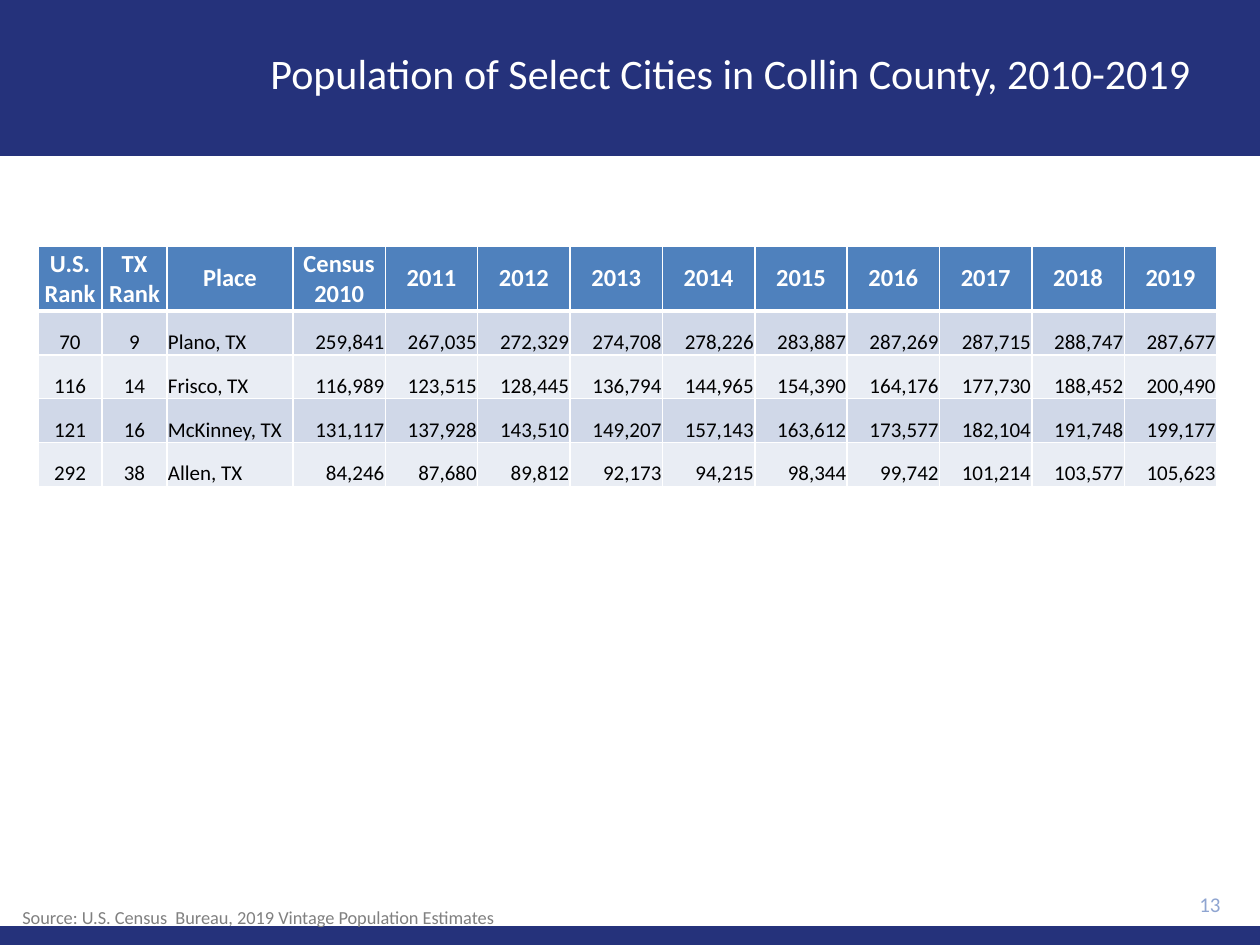
"""Build the slide on city populations in Collin County."""
from lxml import etree
from pptx import Presentation
from pptx.dml.color import RGBColor
from pptx.enum.shapes import MSO_SHAPE
from pptx.enum.text import MSO_ANCHOR, PP_ALIGN
from pptx.oxml.ns import qn
from pptx.util import Emu, Pt

LEFT, CENTER, RIGHT = PP_ALIGN.LEFT, PP_ALIGN.CENTER, PP_ALIGN.RIGHT
TOP, MIDDLE, BOTTOM = MSO_ANCHOR.TOP, MSO_ANCHOR.MIDDLE, MSO_ANCHOR.BOTTOM
RECT = MSO_SHAPE.RECTANGLE

TITLE = "Population of Select Cities in Collin County, 2010-2019"
SOURCE = "Source: U.S. Census  Bureau, 2019 Vintage Population Estimates"
NUMBER = "13"
HEADER = ["U.S. Rank", "TX Rank", "Place", "Census 2010", *map(str, range(2011, 2020))]
CITIES = [
    (70, 9, "Plano, TX", 259841, 267035, 272329, 274708, 278226,
     283887, 287269, 287715, 288747, 287677),
    (116, 14, "Frisco, TX", 116989, 123515, 128445, 136794, 144965,
     154390, 164176, 177730, 188452, 200490),
    (121, 16, "McKinney, TX", 131117, 137928, 143510, 149207, 157143,
     163612, 173577, 182104, 191748, 199177),
    (292, 38, "Allen, TX", 84246, 87680, 89812, 92173, 94215,
     98344, 99742, 101214, 103577, 105623),
]
BARS = [(0, 0, 1260, 156), (0, 926, 1260, 19)]
TABLE = (38, 246, 1179, 239)
FIRST_COLS = [64, 65, 126]
HEADER_H, ROW_H = 63, 44
NAVY, WHITE, HEAD_FILL = "25327B", "FFFFFF", "4F81BD"
BANDS = ["D0D8E8", "E9EDF4"]
TITLE_FMT = dict(size=24, color=WHITE, align=CENTER, anchor=MIDDLE, spacing=0.9)
NUMBER_FMT = dict(size=12, color="8FA5D1", align=RIGHT, anchor=MIDDLE)
SOURCE_FMT = dict(size=10.5, color="808080", align=LEFT, anchor=TOP, spacing=1.07)
HEAD_FMT = dict(size=14, color=WHITE, align=CENTER, bold=True)
BODY_FMT = dict(size=12, color="000000")


def px(n):
    return Emu(round(n * 914400 / 126))


def rgb(value):
    return RGBColor.from_string(value)


def place(shape, box):
    for name, n in zip(("left", "top", "width", "height"), box):
        setattr(shape, name, px(n))


def write(tf, text, size, color, align, anchor=None, bold=False, spacing=None):
    p = tf.paragraphs[0]
    r = p.add_run()
    r.text = text
    for name, value in dict(name="Calibri", size=Pt(size), bold=bold).items():
        setattr(r.font, name, value)
    r.font.color.rgb = rgb(color)
    p.alignment, p.line_spacing = align, spacing
    if anchor is not None:
        tf.word_wrap, tf.vertical_anchor = True, anchor


def add_text(s, box, text, fmt):
    sp = s.shapes.add_textbox(*map(px, box))
    write(sp.text_frame, text, **fmt)


def set_borders(cell, **widths):
    tc_pr = cell._tc.get_or_add_tcPr()
    for i, (side, width) in enumerate(widths.items()):
        ln = etree.Element(qn(f"a:ln{side}"), w=str(Pt(width)))
        fill = etree.SubElement(ln, qn("a:solidFill"))
        etree.SubElement(fill, qn("a:srgbClr"), val=WHITE)
        tc_pr.insert(i, ln)


def format_cell(cell, fill, anchor, margins):
    cell.fill.solid()
    cell.fill.fore_color.rgb = rgb(fill)
    cell.vertical_anchor = anchor
    for side, n in zip(("left", "top", "right", "bottom"), margins):
        setattr(cell, f"margin_{side}", px(n))


def add_table(s):
    n_rows, n_cols = len(CITIES) + 1, len(HEADER)
    table = s.shapes.add_table(n_rows, n_cols, *map(px, TABLE)).table
    n_counts = n_cols - len(FIRST_COLS)
    count_w = (TABLE[2] - sum(FIRST_COLS)) / n_counts
    for col, width in zip(table.columns, FIRST_COLS + [count_w] * n_counts):
        col.width = px(width)
    for row, height in zip(table.rows, [HEADER_H] + [ROW_H] * len(CITIES)):
        row.height = px(height)
    aligns = [CENTER, CENTER, LEFT] + [RIGHT] * n_counts
    for c, text in enumerate(HEADER):
        cell = table.cell(0, c)
        format_cell(cell, HEAD_FILL, MIDDLE, (4, 3, 4, 3))
        set_borders(cell, L=1, R=1, T=1, B=3)
        write(cell.text_frame, text, **HEAD_FMT)
    for r, city in enumerate(CITIES, 1):
        for c, value in enumerate(city):
            cell = table.cell(r, c)
            format_cell(cell, BANDS[(r - 1) % 2], BOTTOM, (1, 1, 1, 0))
            set_borders(cell, L=1, R=1, T=3 if r == 1 else 1, B=1)
            text = value if isinstance(value, str) else f"{value:,}"
            write(cell.text_frame, text, align=aligns[c], **BODY_FMT)


def main():
    prs = Presentation()
    prs.slide_width, prs.slide_height = px(1260), px(945)
    s = prs.slides.add_slide(prs.slide_layouts[5])
    for box in BARS:
        sp = s.shapes.add_shape(RECT, *map(px, box))
        sp.shadow.inherit = False
        sp.fill.solid()
        sp.fill.fore_color.rgb = rgb(NAVY)
        sp.line.fill.background()
    title = s.shapes.title
    title.element.getparent().append(title.element)
    place(title, (214, 13, 1033, 126))
    write(title.text_frame, TITLE, **TITLE_FMT)
    add_text(s, (1121, 883, 112, 43), NUMBER, NUMBER_FMT)
    add_table(s)
    add_text(s, (10, 898, 630, 37), SOURCE, SOURCE_FMT)
    prs.save("out.pptx")


if __name__ == "__main__":
    main()
